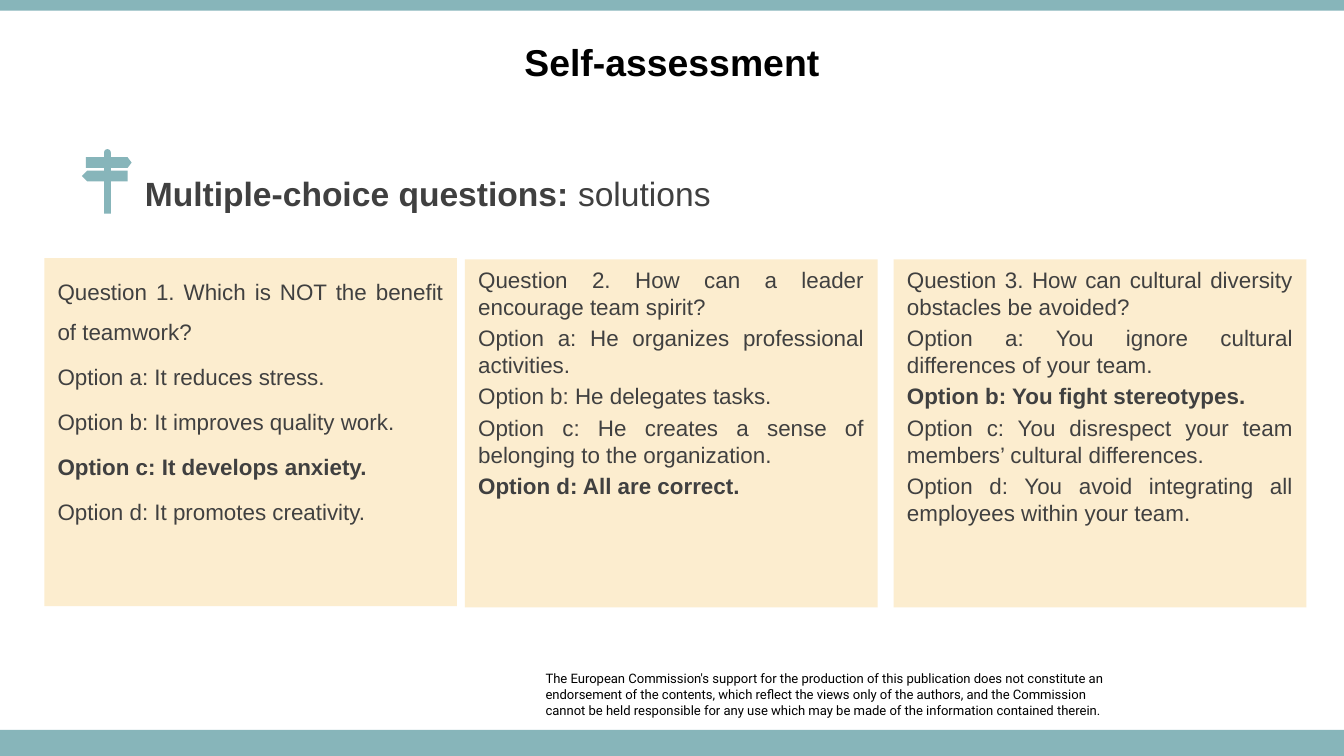
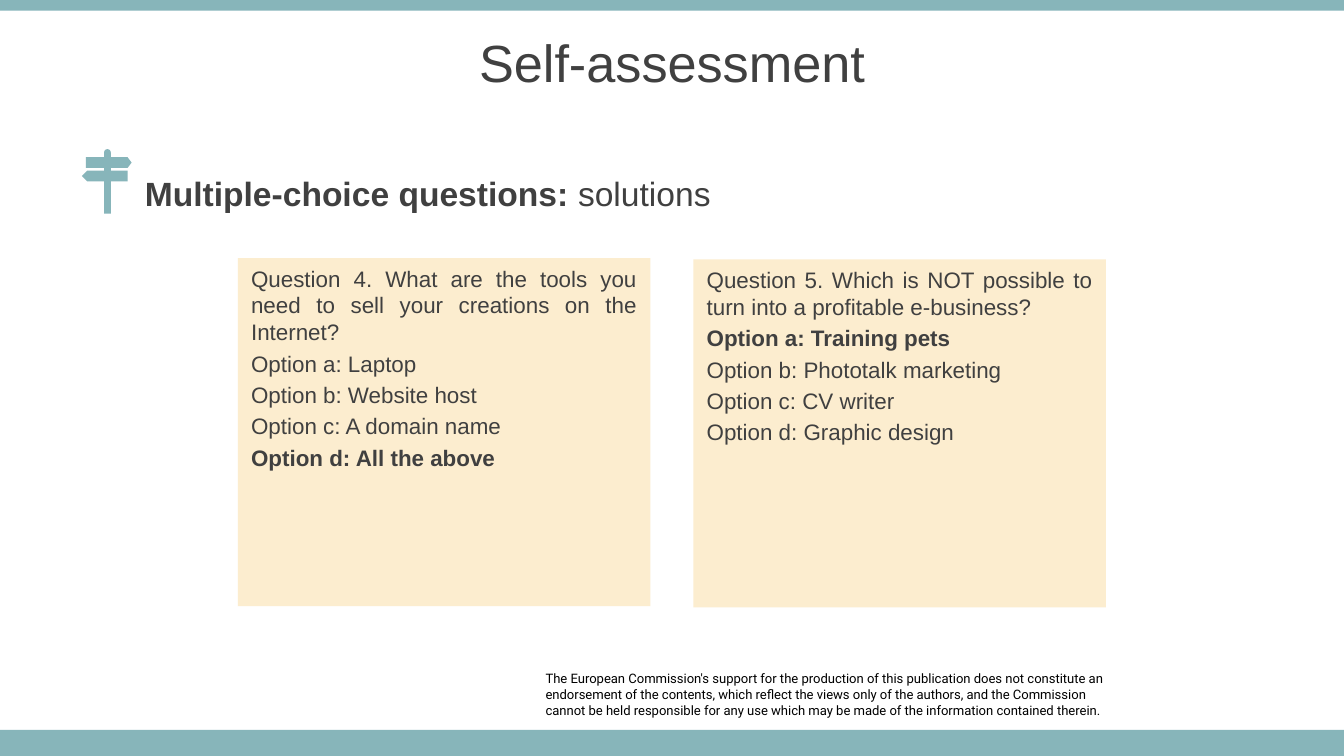
from math import cos, pi, sin

from pptx import Presentation
from pptx.dml.color import RGBColor
from pptx.enum.shapes import MSO_SHAPE
from pptx.enum.text import MSO_ANCHOR, MSO_AUTO_SIZE, PP_ALIGN
from pptx.util import Inches, Pt

TEAL = RGBColor(0x87, 0xB5, 0xBA)
CREAM = RGBColor(0xFC, 0xED, 0xCF)
GREY = RGBColor(0x40, 0x40, 0x40)
BLACK = RGBColor(0, 0, 0)
WIDE = 10
HIGH = WIDE * 9 / 16
TITLE_ONLY = 5

NOTICE = [
    "The European Commission's support for the production of this publication "
    "does not constitute an endorsement of the contents, which reflect the "
    "views only of the authors, and the Commission",
    "cannot be held responsible for any use which may be made of the "
    "information contained therein.",
]

SLIDES = [
    dict(title="**Self-assessment**", size=20, color=BLACK, cards=[
        (0.33, 1.5, [
            "Question 1. Which is NOT the benefit of teamwork?",
            "Option a: It reduces stress.",
            "Option b: It improves quality work.",
            "**Option c: It develops anxiety.**",
            "Option d: It promotes creativity."]),
        (3.46, 1.0, [
            "Question 2. How can a leader encourage team spirit?",
            "Option a: He organizes professional activities.",
            "Option b: He delegates tasks.",
            "Option c: He creates a sense of belonging to the organization.",
            "**Option d: All are correct.**"]),
        (6.65, 1.0, [
            "Question 3. How can cultural diversity obstacles be avoided?",
            "Option a: You ignore cultural differences of your team.",
            "**Option b: You fight stereotypes.**",
            "Option c: You disrespect your team members’ cultural differences.",
            "Option d: You avoid integrating all employees within your team."]),
    ]),
    dict(title="Self-assessment", size=28, color=GREY, cards=[
        (1.77, 1.0, [
            "Question 4. What are the tools you need to sell your creations "
            "on the Internet?",
            "Option a: Laptop",
            "Option b: Website host",
            "Option c: A domain name",
            "**Option d: All the above**"]),
        (5.16, 1.0, [
            "Question 5. Which is NOT possible to turn into a profitable "
            "e-business?",
            "**Option a: Training pets**",
            "Option b: Phototalk marketing",
            "Option c: CV writer",
            "Option d: Graphic design"]),
    ]),
]


def write(frame, lines, size=12, color=GREY, font="Arial", align=PP_ALIGN.LEFT,
          anchor=MSO_ANCHOR.TOP, gap=0.2, leading=1.0, inset=None):
    """Fill a text frame with lines, where **marks** enclose bold text."""
    frame.word_wrap = True
    frame.auto_size = MSO_AUTO_SIZE.NONE
    frame.vertical_anchor = anchor
    if inset is not None:
        frame.margin_left = frame.margin_right = Inches(inset)
        frame.margin_top = frame.margin_bottom = Inches(inset)
    for row, line in enumerate(lines):
        para = frame.add_paragraph() if row else frame.paragraphs[0]
        para.alignment = align
        para.line_spacing = leading
        para.space_before = Pt(size * gap if row else 0)
        for place, part in enumerate(line.split("**")):
            if part:
                run = para.add_run()
                run.text = part
                run.font.name = font
                run.font.size = Pt(size)
                run.font.bold = place % 2 == 1
                run.font.color.rgb = color


class Deck:
    """Holds the style and the current slide."""

    def __init__(self):
        self.show = Presentation()
        self.show.slide_width = Inches(WIDE)
        self.show.slide_height = Inches(HIGH)
        self.slide = None

    def start(self):
        layout = self.show.slide_layouts[TITLE_ONLY]
        self.slide = self.show.slides.add_slide(layout)
        self.label(4.06, 4.99, 4.17, 0.35, NOTICE, size=7, color=BLACK,
                   font="Roboto", gap=0, inset=0)
        self.block(0, 5.43, WIDE, HIGH - 5.43, TEAL)
        self.block(0, 0, WIDE, 0.08, TEAL)

    def paint(self, shape, color):
        shape.shadow.inherit = False
        shape.fill.solid()
        shape.fill.fore_color.rgb = color
        shape.line.fill.background()
        return shape

    def block(self, x, y, w, h, color):
        shape = self.slide.shapes.add_shape(
            MSO_SHAPE.RECTANGLE, Inches(x), Inches(y), Inches(w), Inches(h))
        return self.paint(shape, color)

    def label(self, x, y, w, h, lines, **style):
        box = self.slide.shapes.add_textbox(
            Inches(x), Inches(y), Inches(w), Inches(h))
        write(box.text_frame, lines, **style)

    def title(self, text, **style):
        head = self.slide.shapes.title
        head.left, head.top = Inches(0), Inches(0.14)
        head.width, head.height = Inches(WIDE), Inches(0.63)
        write(head.text_frame, [text], align=PP_ALIGN.CENTER,
              anchor=MSO_ANCHOR.MIDDLE, **style)

    def signpost(self):
        mid, half, steps = 0.8, 0.025, 8
        cap = [(mid - half * cos(pi * n / steps),
                1.135 - half * sin(pi * n / steps)) for n in range(steps + 1)]
        left, right = mid - half, mid + half
        points = cap + [
            (right, 1.17), (0.95, 1.17), (0.98, 1.21), (0.95, 1.25),
            (right, 1.25), (right, 1.27), (0.95, 1.27), (0.95, 1.35),
            (right, 1.35), (right, 1.59), (left, 1.59), (left, 1.35),
            (0.65, 1.35), (0.61, 1.31), (0.65, 1.27), (left, 1.27),
            (left, 1.25), (0.64, 1.25), (0.64, 1.17), (left, 1.17)]
        first, *rest = [(Inches(x), Inches(y)) for x, y in points]
        path = self.slide.shapes.build_freeform(*first)
        path.add_line_segments(rest, close=True)
        self.paint(path.convert_to_shape(), TEAL)

    def card(self, x, y, lines, leading):
        shape = self.block(x, y, 3.07, 2.59, CREAM)
        write(shape.text_frame, lines, align=PP_ALIGN.JUSTIFY, leading=leading)


def main():
    deck = Deck()
    for page in SLIDES:
        deck.start()
        deck.title(page["title"], size=page["size"], color=page["color"])
        deck.label(0.98, 1.28, 6.69, 0.31,
                   ["**Multiple-choice questions: **solutions"], size=18,
                   anchor=MSO_ANCHOR.MIDDLE)
        deck.signpost()
        for order, (x, leading, lines) in enumerate(page["cards"]):
            deck.card(x, 1.93 if order else 1.92, lines, leading)
    deck.show.save("out.pptx")


if __name__ == "__main__":
    main()
